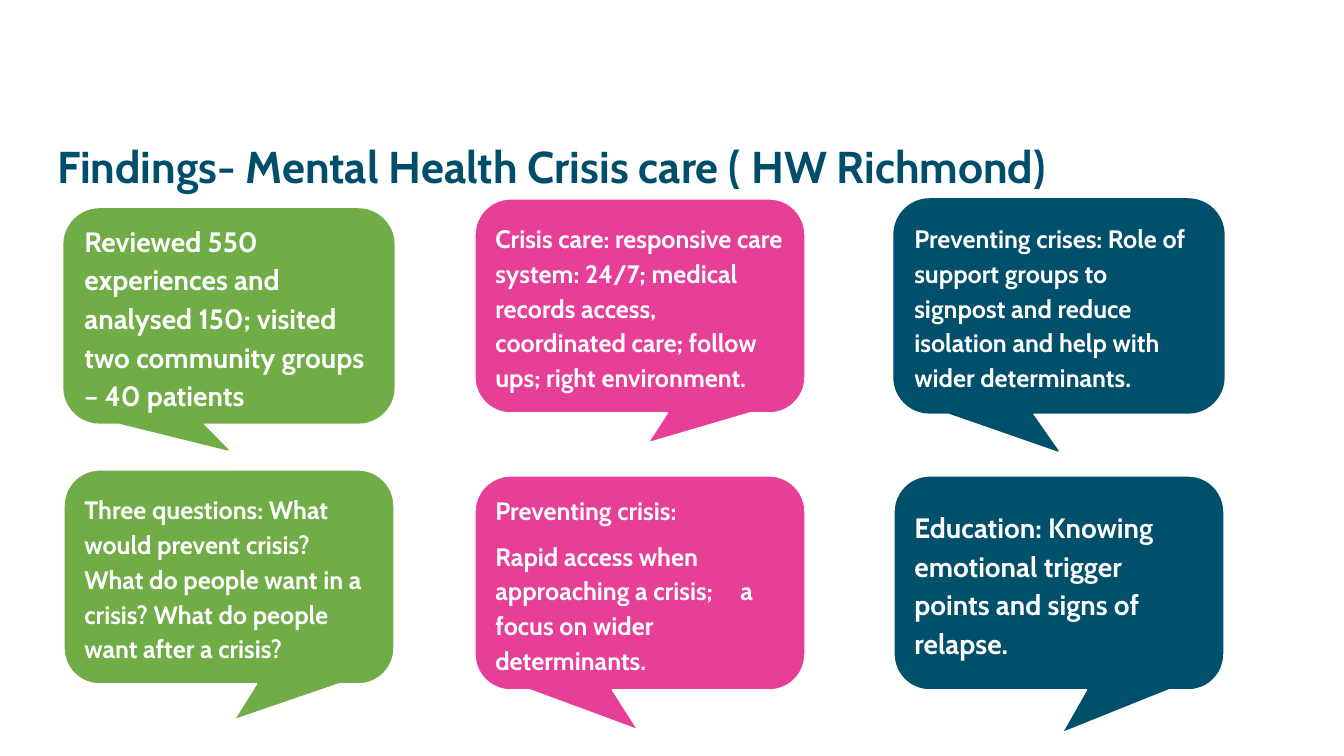
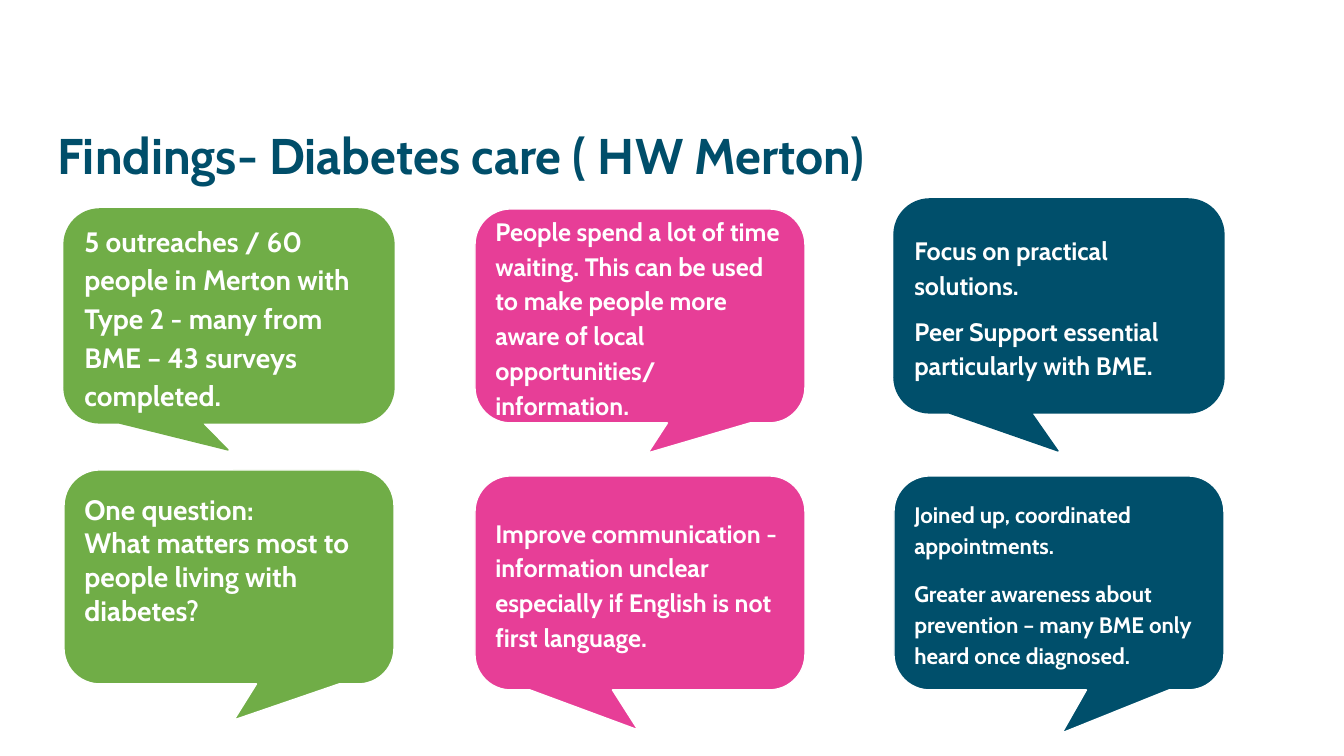
"""Build two slides of findings, each with six speech bubbles."""
from lxml.etree import SubElement
from pptx import Presentation
from pptx.dml.color import RGBColor
from pptx.enum.shapes import MSO_SHAPE
from pptx.enum.text import MSO_ANCHOR, MSO_AUTO_SIZE, PP_ALIGN
from pptx.oxml.ns import qn
from pptx.util import Pt

SCALE = 914400 / 100.8
FONT = "Cabin"
INK = RGBColor(0x00, 0x4E, 0x6A)
GREEN = RGBColor(0x70, 0xAD, 0x47)
PINK = RGBColor(0xE7, 0x3E, 0x97)
NAVY = RGBColor(0x00, 0x4F, 0x6B)
WHITE = RGBColor(0xFF, 0xFF, 0xFF)

WIDE, HIGH = 330, 214
TAB = 245
SLOTS = [
    {"left": 64, "top": 209, "tip": (-1, 134), "fill": GREEN, "line": GREEN},
    {"left": 475, "top": 199, "tip": (8, 137), "fill": PINK, "line": WHITE},
    {"left": 894, "top": 199, "tip": (-1, 145), "fill": NAVY, "line": NAVY},
    {"left": 64, "top": 470, "tip": (5, 143), "fill": GREEN, "line": WHITE},
    {"left": 475, "top": 476, "tip": (-2, 147), "fill": PINK, "line": WHITE},
    {"left": 894, "top": 476, "tip": (3, 150), "fill": NAVY, "line": WHITE},
]

SLIDES = [
    {"title": "Findings- Mental Health Crisis care ( HW Richmond)",
     "size": 31.8, "mid": 166,
     "notes": [
         {"size": 20, "text": ["Reviewed 550 experiences and analysed 150; visited "
                               "two community groups – 40 patients"]},
         {"text": ["Crisis care: responsive care system: 24/7; medical records "
                   "access, coordinated care; follow ups; right environment."]},
         {"text": ["Preventing crises: Role of support groups to signpost and "
                   "reduce isolation and help with wider determinants."]},
         {"text": ["Three questions: What would prevent crisis? What do people "
                   "want in a crisis? What do people want after a crisis?"]},
         {"text": ["Preventing crisis:",
                   "Rapid access when approaching a crisis;\ta focus on wider "
                   "determinants."]},
         {"size": 20, "text": ["Education: Knowing emotional trigger points and "
                               "signs of relapse."]},
     ]},
    {"title": "Findings- Diabetes care ( HW Merton)",
     "size": 35.8, "mid": 154,
     "notes": [
         {"size": 20, "text": ["5 outreaches / 60 people in Merton with Type 2 - "
                               "many from BME – 43 surveys completed."]},
         {"drop": 10, "after": 0,
          "text": ["People spend a lot of time waiting. This can be used to make "
                   "people more aware of local opportunities/",
                   "information."]},
         {"text": ["Focus on practical solutions.",
                   "Peer Support essential particularly with BME."]},
         {"size": 20, "after": 0, "lead": 1.0, "low": 40,
          "text": ["One question:",
                   "What matters most to people living with diabetes?"]},
         {"text": ["Improve communication - information unclear especially if "
                   "English is not first language."]},
         {"size": 16, "after": 12,
          "text": ["Joined up, coordinated appointments.",
                   "Greater awareness about prevention – many BME only heard "
                   "once diagnosed."]},
     ]},
]


def px(n):
    return round(n * SCALE)


def style(para, size, color):
    para.alignment = PP_ALIGN.LEFT
    for run in para.runs:
        font = run.font
        font.name, font.size, font.bold = FONT, Pt(size), True
        font.color.rgb = color


def add_title(slide, talk):
    title = slide.shapes.title
    title.left, title.top = px(47), px(talk["mid"] - 40)
    title.width, title.height = px(1203), px(80)
    frame = title.text_frame
    frame.text = talk["title"]
    frame.word_wrap = True
    frame.auto_size = MSO_AUTO_SIZE.NONE
    frame.vertical_anchor = MSO_ANCHOR.MIDDLE
    style(frame.paragraphs[0], talk["size"], INK)


def add_note(slide, slot, note):
    top = slot["top"] + note.get("drop", 0)
    shape = slide.shapes.add_shape(
        MSO_SHAPE.ROUNDED_RECTANGULAR_CALLOUT,
        px(slot["left"]), px(top), px(WIDE), px(HIGH))
    across, down = slot["tip"]
    shape.adjustments[0] = across / WIDE
    shape.adjustments[1] = down / HIGH
    shape.shadow.inherit = False
    shape.fill.solid()
    shape.fill.fore_color.rgb = slot["fill"]
    shape.line.color.rgb = slot["line"]
    shape.line.width = Pt(1)
    frame = shape.text_frame
    frame.word_wrap = True
    frame.vertical_anchor = MSO_ANCHOR.MIDDLE
    frame.margin_bottom = px(note.get("low", 5))
    frame.text = "\n".join(note["text"])
    for para in frame.paragraphs:
        if "\t" in para.text:
            tabs = SubElement(para._p.get_or_add_pPr(), qn("a:tabLst"))
            SubElement(tabs, qn("a:tab"), pos=str(px(TAB)), algn="l")
        para.line_spacing = note.get("lead", 1.15)
        para.space_after = Pt(note.get("after", 8))
        style(para, note.get("size", 18), WHITE)


def main():
    deck = Presentation()
    deck.slide_width, deck.slide_height = px(1344), px(756)
    for talk in SLIDES:
        slide = deck.slides.add_slide(deck.slide_layouts[5])
        add_title(slide, talk)
        for slot, note in zip(SLOTS, talk["notes"]):
            add_note(slide, slot, note)
    deck.save("out.pptx")


if __name__ == "__main__":
    main()
